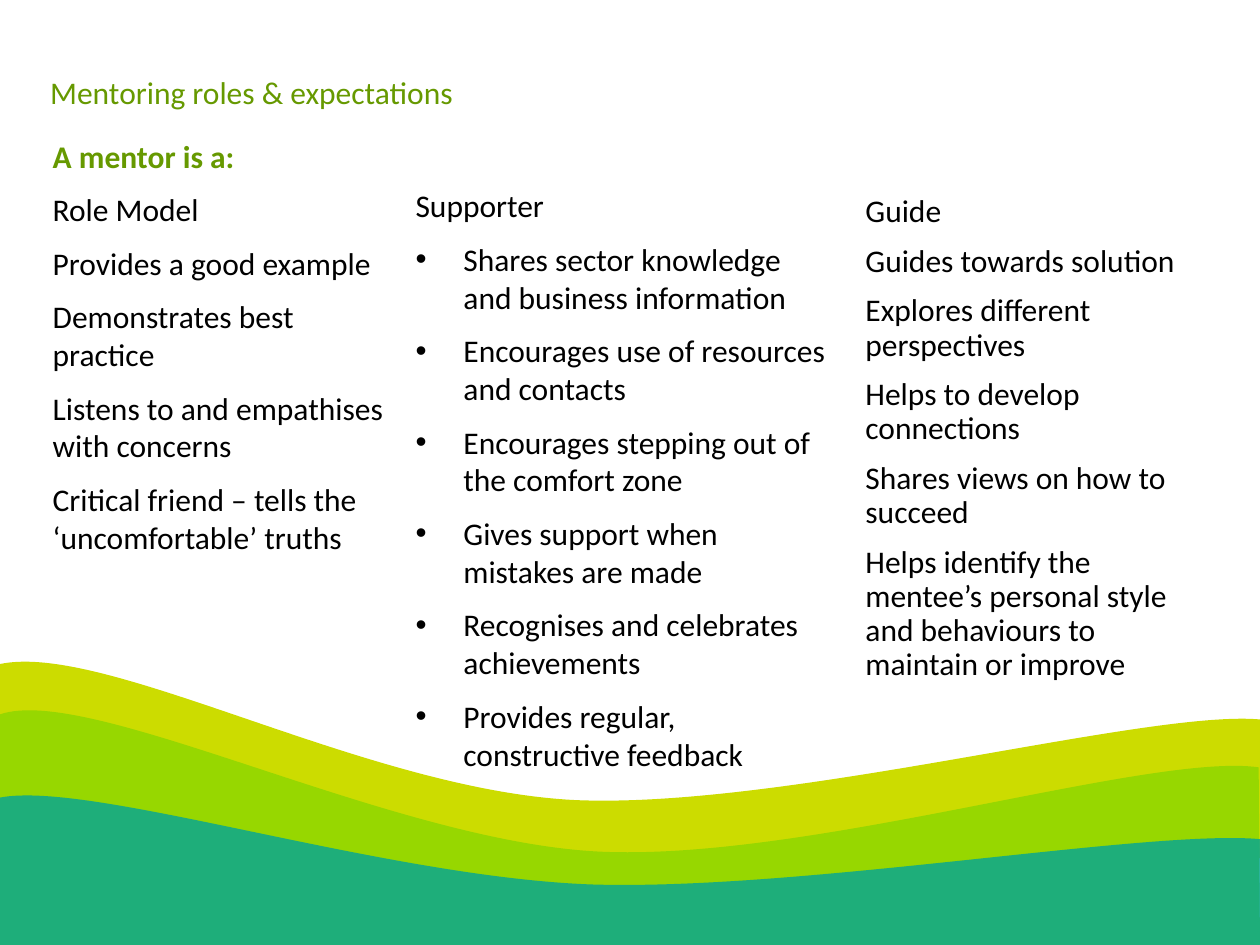
from lxml.etree import SubElement
from pptx import Presentation
from pptx.dml.color import RGBColor
from pptx.enum.text import MSO_AUTO_SIZE
from pptx.oxml.ns import qn
from pptx.util import Inches, Pt

COLORS = {"lime": "CCDC00", "green": "97D700", "teal": "00A499",
          "heading": "669900", "body": "000000"}

# Each wave: colour, opacity in percent, bottom, crest as Bezier points from left to right
WAVES = [
    ("lime", 100, 6.81, [(0, 5.27), (0.85, 5.09), (2.9, 6.27), (4.57, 6.35),
                         (6.24, 6.42), (9.1, 5.63), (10, 5.71)]),
    ("green", 100, 7.5, [(0, 5.67), (0.72, 5.42), (3.12, 6.69), (4.78, 6.76),
                         (6.45, 6.83), (9.12, 5.97), (9.99, 6.09)]),
    ("teal", 80, 7.5, [(0, 6.33), (0.73, 6.19), (3.03, 6.96), (4.7, 7.02),
                       (6.36, 7.07), (9.12, 6.58), (10, 6.66)]),
]

ROLE_MODEL = ["Role Model", "Provides a good example", "Demonstrates best practice",
              "Listens to and empathises with concerns",
              "Critical friend – tells the ‘uncomfortable’ truths"]
SUPPORTER = ["Supporter", "Shares sector knowledge and business information",
             "Encourages use of resources and contacts",
             "Encourages stepping out of the comfort zone",
             "Gives support when mistakes are made",
             "Recognises and celebrates achievements",
             "Provides regular, constructive feedback"]
GUIDE = ["Guide", "Guides towards solution", "Explores different perspectives",
         "Helps to develop connections", "Shares views on how to succeed",
         "Helps identify the mentee’s personal style and behaviours to maintain or improve"]


def curve_lines(sp, count):
    """Turn the first lines of a freeform, three at a time, into Bezier curves."""
    lines = list(sp._element.iter(qn("a:lnTo")))[:count]
    for i in range(0, count, 3):
        group = lines[i:i + 3]
        outline = group[0].getparent()
        curve = outline.makeelement(qn("a:cubicBezTo"))
        group[0].addprevious(curve)
        for line in group:
            curve.append(line[0])
            outline.remove(line)


def add_wave(s, color, opacity, bottom, crest):
    points = [(Inches(x), Inches(y)) for x, y in crest + [(10, bottom), (0, bottom)]]
    builder = s.shapes.build_freeform(*points[0])
    builder.add_line_segments(points[1:], close=True)
    sp = builder.convert_to_shape()
    curve_lines(sp, len(crest) - 1)
    sp.shadow.inherit = False
    sp.line.fill.background()
    sp.fill.solid()
    sp.fill.fore_color.rgb = RGBColor.from_string(COLORS[color])
    if opacity < 100:
        clr = sp._element.spPr.find(qn("a:solidFill")).find(qn("a:srgbClr"))
        SubElement(clr, qn("a:alpha"), val=str(opacity * 1000))


def add_text(s, box, lines, color="body", bold=None, wrap=True):
    tf = s.shapes.add_textbox(*map(Inches, box)).text_frame
    tf.word_wrap = wrap
    tf.auto_size = MSO_AUTO_SIZE.SHAPE_TO_FIT_TEXT
    tf.text = "\n".join(lines)
    for p in tf.paragraphs:
        for r in p.runs:
            r.font.name = "Calibri"
            r.font.size = Pt(18)
            r.font.bold = bold
            r.font.color.rgb = RGBColor.from_string(COLORS[color])
    return tf


def add_role(s, box, lines, bullets=False, line_spacing=None):
    """A role name followed by what the mentor does in it."""
    tf = add_text(s, box, lines)
    for i, p in enumerate(tf.paragraphs):
        p.line_spacing = line_spacing
        pPr = p._p.get_or_add_pPr()
        before = SubElement(pPr, qn("a:spcBef"))
        SubElement(before, qn("a:spcPct"), val="50000")
        if bullets and i:
            pPr.set("marL", str(Inches(0.38)))
            pPr.set("indent", str(-Inches(0.38)))
            SubElement(pPr, qn("a:buFont"), typeface="Arial")
            SubElement(pPr, qn("a:buChar"), char="•")


def main():
    prs = Presentation()
    prs.slide_width, prs.slide_height = Inches(10), Inches(7.5)
    s = prs.slides.add_slide(prs.slide_layouts[6])
    for wave in WAVES:
        add_wave(s, *wave)
    add_text(s, (0.3, 0.53, 3.5, 0.4), ["Mentoring roles & expectations"],
             "heading", wrap=False)
    add_text(s, (0.32, 1.04, 1.88, 0.4), ["A mentor is a:"],
             "heading", bold=True, wrap=False)
    add_role(s, (0.32, 1.46, 2.91, 3.13), ROLE_MODEL)
    add_role(s, (3.2, 1.43, 3.5, 4.95), SUPPORTER, bullets=True)
    add_role(s, (6.77, 1.5, 2.91, 4.13), GUIDE, line_spacing=0.9)
    prs.save("out.pptx")


if __name__ == "__main__":
    main()
